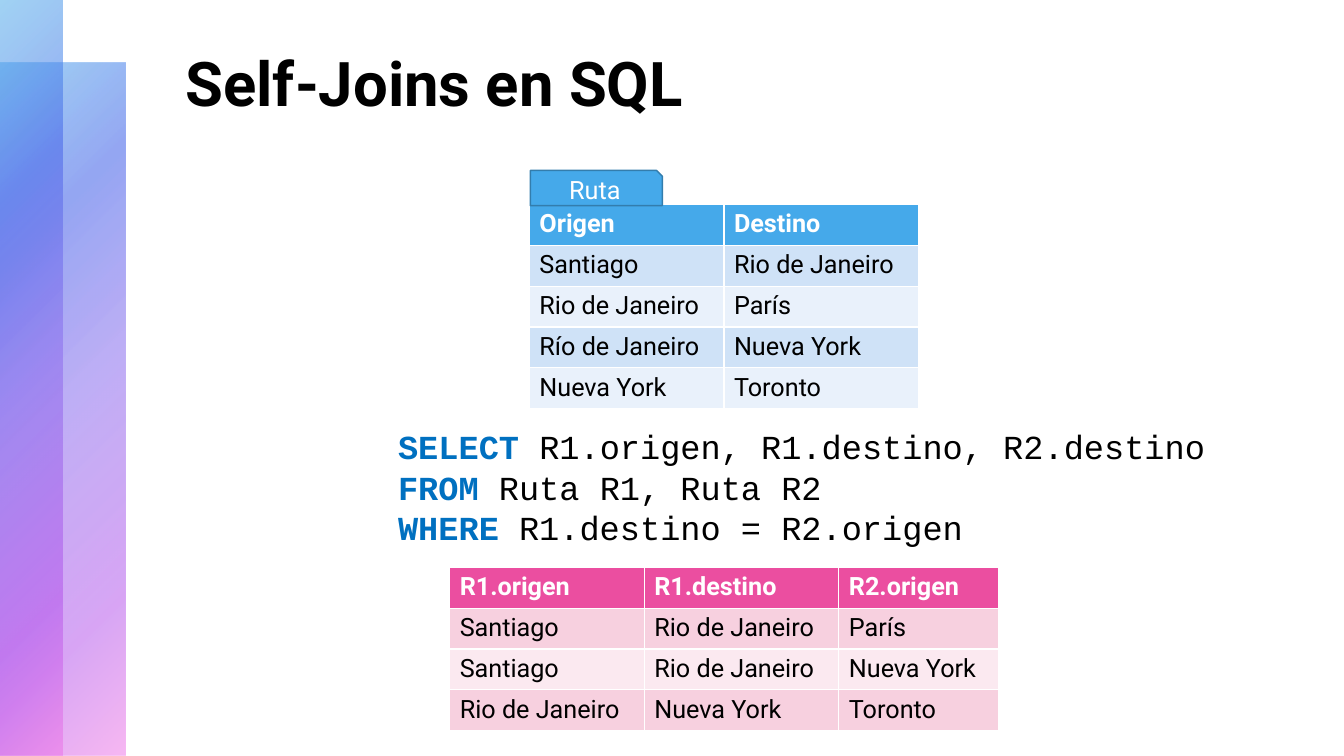
from lxml import etree
from pptx import Presentation
from pptx.dml.color import RGBColor
from pptx.enum.shapes import MSO_SHAPE
from pptx.enum.text import MSO_ANCHOR, MSO_AUTO_SIZE, PP_ALIGN
from pptx.oxml import parse_xml
from pptx.oxml.ns import nsdecls
from pptx.util import Inches, Pt

BLACK = RGBColor(0x00, 0x00, 0x00)
WHITE = RGBColor(0xFF, 0xFF, 0xFF)
BLUE = RGBColor(0x45, 0xA9, 0xEA)
BLUE_BANDS = (RGBColor(0xCF, 0xE2, 0xF7), RGBColor(0xE9, 0xF1, 0xFB))
DARK_BLUE = RGBColor(0x33, 0x7D, 0xAD)
PINK = RGBColor(0xEB, 0x4E, 0xA0)
PINK_BANDS = (RGBColor(0xF7, 0xD0, 0xDF), RGBColor(0xFB, 0xE9, 0xF0))
KEYWORD = RGBColor(0x00, 0x70, 0xC0)
INDIGO = RGBColor(0x4E, 0x6C, 0xEB)
VIOLET = RGBColor(0x8B, 0x6E, 0xEE)
PURPLE = RGBColor(0xB3, 0x4E, 0xEB)
ORCHID = RGBColor(0xEE, 0x6E, 0xE7)

ROUTES = [
    ("Origen", "Destino"),
    ("Santiago", "Rio de Janeiro"),
    ("Rio de Janeiro", "París"),
    ("Río de Janeiro", "Nueva York"),
    ("Nueva York", "Toronto"),
]
JOINED_ROUTES = [
    ("R1.origen", "R1.destino", "R2.origen"),
    ("Santiago", "Rio de Janeiro", "París"),
    ("Santiago", "Rio de Janeiro", "Nueva York"),
    ("Rio de Janeiro", "Nueva York", "Toronto"),
]
QUERY = [
    ("SELECT ", "R1.origen, R1.destino, R2.destino"),
    ("FROM ", "Ruta R1, Ruta R2"),
    ("WHERE ", "R1.destino = R2.origen"),
]


def add_text(paragraph, text, size=18, font="Roboto", color=BLACK, bold=False,
             align=PP_ALIGN.LEFT):
    paragraph.alignment = align
    run = paragraph.add_run()
    run.text = text
    run.font.size = Pt(size)
    run.font.name = font
    run.font.color.rgb = color
    run.font.bold = bold


def add_gradient_band(slide, left, top, width, height, middle_stop):
    shape = slide.shapes.add_shape(MSO_SHAPE.RECTANGLE, Inches(left), Inches(top),
                                   Inches(width), Inches(height))
    shape.shadow.inherit = False
    shape.line.fill.background()
    # Radial gradient from the top left corner: position, colour, opacity
    stops = [(0, BLUE, 50), (25, INDIGO, 60), (middle_stop, VIOLET, 55),
             (81, PURPLE, 50), (99, ORCHID, 50)]
    stop_xml = "".join(
        f'<a:gs pos="{position * 1000}"><a:srgbClr val="{color}">'
        f'<a:alpha val="{opacity * 1000}"/></a:srgbClr></a:gs>'
        for position, color, opacity in stops)
    gradient = parse_xml(
        f'<a:gradFill {nsdecls("a")} rotWithShape="1"><a:gsLst>{stop_xml}</a:gsLst>'
        '<a:path path="circle"><a:fillToRect r="100000" b="100000"/></a:path>'
        '</a:gradFill>')
    shape.element.spPr.find("{*}prstGeom").addnext(gradient)


def add_title(slide, text):
    title = slide.shapes.title
    title.left, title.top = Inches(1.74), Inches(0.4)
    title.width, title.height = Inches(10.37), Inches(1.39)
    title.text_frame.vertical_anchor = MSO_ANCHOR.TOP
    add_text(title.text_frame.paragraphs[0], text, size=44, bold=True)


def add_data_table(slide, left, top, widths, row_height, rows, header_color, bands):
    frame = slide.shapes.add_table(len(rows), len(widths), Inches(left), Inches(top),
                                   Inches(sum(widths)),
                                   Inches(row_height * len(rows)))
    table = frame.table
    for column, width in zip(table.columns, widths):
        column.width = Inches(width)
    for row_index, values in enumerate(rows):
        is_header = row_index == 0
        table.rows[row_index].height = Inches(row_height)
        for column_index, value in enumerate(values):
            cell = table.cell(row_index, column_index)
            cell.fill.solid()
            cell.fill.fore_color.rgb = (
                header_color if is_header else bands[(row_index - 1) % 2])
            add_text(cell.text_frame.paragraphs[0], value, bold=is_header,
                     color=WHITE if is_header else BLACK)


def add_table_tab(slide, text):
    tab = slide.shapes.add_shape(MSO_SHAPE.SNIP_1_RECTANGLE, Inches(5.26),
                                 Inches(1.69), Inches(1.31), Inches(0.35))
    tab.shadow.inherit = False
    tab.fill.solid()
    tab.fill.fore_color.rgb = BLUE
    tab.line.color.rgb = DARK_BLUE
    tab.line.width = Pt(1)
    tab.text_frame.vertical_anchor = MSO_ANCHOR.MIDDLE
    add_text(tab.text_frame.paragraphs[0], text, color=WHITE, align=PP_ALIGN.CENTER)


def add_query(slide, lines):
    box = slide.shapes.add_textbox(Inches(3.85), Inches(4.18), Inches(8.27),
                                   Inches(1.31))
    text_frame = box.text_frame
    text_frame.word_wrap = False
    text_frame.auto_size = MSO_AUTO_SIZE.SHAPE_TO_FIT_TEXT
    for index, (keyword, rest) in enumerate(lines):
        paragraph = text_frame.add_paragraph() if index else text_frame.paragraphs[0]
        add_text(paragraph, keyword, size=24, font="Courier New", color=KEYWORD,
                 bold=True)
        add_text(paragraph, rest, size=24, font="Courier New")


def main():
    presentation = Presentation()
    presentation.slide_width = Inches(13.33)
    presentation.slide_height = Inches(7.5)
    slide = presentation.slides.add_slide(presentation.slide_layouts[5])

    # Side decoration
    add_gradient_band(slide, 0, 0.62, 1.24, 6.88, middle_stop=50)
    add_gradient_band(slide, 0, 0, 0.62, 7.5, middle_stop=49)

    add_title(slide, "Self-Joins en SQL")

    # Source table with its name tab
    add_data_table(slide, 5.25, 2.03, (1.93, 1.93), 0.405, ROUTES, BLUE, BLUE_BANDS)
    add_table_tab(slide, "Ruta")

    # Query and its result
    add_query(slide, QUERY)
    add_data_table(slide, 4.46, 5.63, (1.93, 1.93, 1.58), 0.405, JOINED_ROUTES,
                   PINK, PINK_BANDS)

    presentation.save("out.pptx")


if __name__ == "__main__":
    main()
